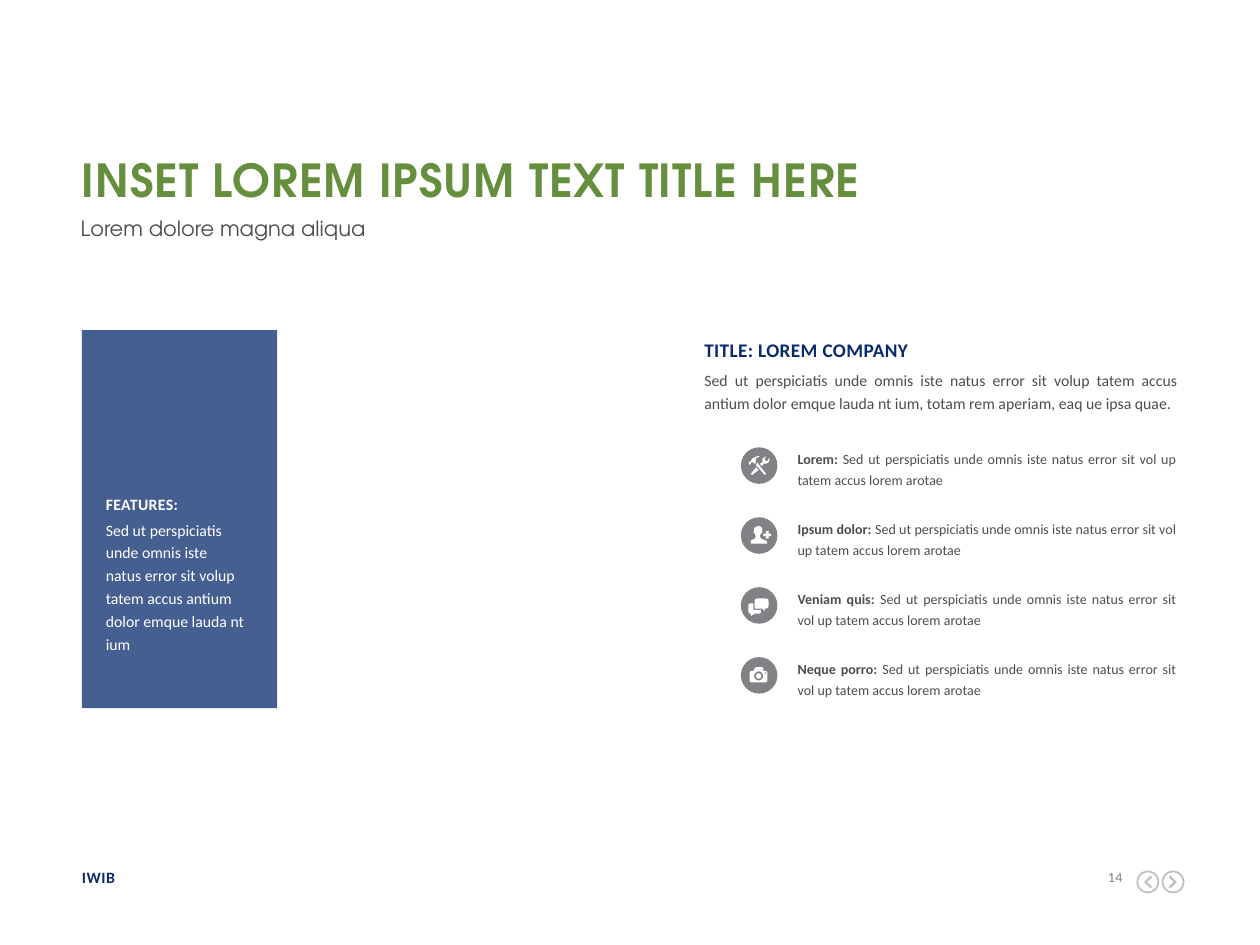
import math
from dataclasses import dataclass

import pptx
import pptx.dml.color
import pptx.enum.shapes
import pptx.enum.text
import pptx.oxml.ns
import pptx.util
from lxml import etree

Inches = pptx.util.Inches
Align = pptx.enum.text.PP_ALIGN
Shape = pptx.enum.shapes.MSO_SHAPE

COLORS = {
    "navy": "092A6D", "green": "658E3D", "text": "4D4D4D", "white": "FFFFFF",
    "icon": "808285", "number": "808080", "arrow": "BFBFBF",
}
BODY, DISPLAY = "Calibri", "TeX Gyre Adventor"
SED = "Sed ut perspiciatis unde omnis iste natus error sit vol"

Contour = list[tuple[float, float]]


@dataclass
class Span:
    text: str
    size: float
    color: str
    bold: bool = False
    tracking: int = 0  # hundredths of a point
    font: str = BODY


@dataclass
class TextBlock:
    left: float
    top: float
    width: float
    height: float
    spans: list[Span]
    align: Align = Align.LEFT
    leading: float | None = None
    after: float = 0


@dataclass
class Feature:
    label: str
    text: str
    contours: list[Contour]


def circle(x: float, y: float, radius: float, steps: int = 40) -> Contour:
    angles = [2 * math.pi * step / steps for step in range(steps)]
    return [(x + radius * math.cos(a), y + radius * math.sin(a)) for a in angles]


def write_text(box, block: TextBlock, grow: bool = True) -> None:
    box.left, box.top = Inches(block.left), Inches(block.top)
    box.width, box.height = Inches(block.width), Inches(block.height)
    frame = box.text_frame
    frame.word_wrap = True
    sizing = pptx.enum.text.MSO_AUTO_SIZE
    frame.auto_size = sizing.SHAPE_TO_FIT_TEXT if grow else sizing.NONE
    frame.vertical_anchor = pptx.enum.text.MSO_ANCHOR.TOP
    frame.margin_left = frame.margin_right = frame.margin_top = frame.margin_bottom = 0
    para = frame.paragraphs[0]
    para.alignment = block.align
    para.space_before = pptx.util.Pt(0)
    para.space_after = pptx.util.Pt(block.after)
    if block.leading:
        para.line_spacing = pptx.util.Pt(block.leading)
    for part in block.spans:
        span = para.add_run()
        span.text = part.text
        span.font.name = part.font
        span.font.size = pptx.util.Pt(part.size)
        span.font.bold = part.bold
        span.font.color.rgb = pptx.dml.color.RGBColor.from_string(COLORS[part.color])
        if part.tracking:
            span._r.get_or_add_rPr().set("spc", str(part.tracking))


def add_text(shapes, block: TextBlock) -> None:
    write_text(shapes.add_textbox(0, 0, 0, 0), block)


def paint(shape, color: str) -> None:
    shape.shadow.inherit = False
    shape.fill.solid()
    shape.fill.fore_color.rgb = pptx.dml.color.RGBColor.from_string(COLORS[color])
    shape.line.fill.background()


def add_preset(shapes, kind: Shape, left: float, top: float,
               width: float, height: float, color: str):
    shape = shapes.add_shape(kind, Inches(left), Inches(top), Inches(width), Inches(height))
    paint(shape, color)
    return shape


def add_glyph(shapes, left: float, top: float, contours: list[Contour], color: str) -> None:
    """Draw contours given in hundredths of an inch from left, top."""
    placed = [[(left * 1000 + x * 10, top * 1000 + y * 10) for x, y in contour]
              for contour in contours]
    builder = shapes.build_freeform(*placed[0][0], scale=Inches(1) / 1000)
    for index, contour in enumerate(placed):
        if index:
            builder.move_to(*contour[0])
        builder.add_line_segments(contour[1:], close=True)
    paint(builder.convert_to_shape(), color)


TOOLS = [
    [(6, 12), (7, 14), (8, 13), (8, 12), (9, 11.5), (11, 13), (12, 12), (12, 11),
     (11.5, 10), (12.5, 8.5), (15, 7), (13, 7), (9, 9), (8, 11)],
    [(13, 12), (12, 14), (19, 22), (20, 21)],
    [(23, 9), (22, 9), (21, 11), (20, 11), (19, 9), (20, 7), (17, 9), (17, 12),
     (15, 13), (17, 15), (18, 13), (20, 13), (22, 12)],
    [(8, 21), (9, 22), (14, 18), (12, 16)],
]
PERSON = [
    [(21, 20), (21, 21), (8, 21), (8, 18.5), (11, 17), (12, 15), (11, 13), (10, 12),
     (10.5, 11), (10.5, 9), (12, 7.5), (14, 7), (16, 7.5), (17, 9), (17, 12),
     (16, 13), (15, 15), (16, 17), (20, 18.5)],
    [(24, 13), (24, 15), (22, 15), (22, 17), (20, 17), (20, 15),
     (18, 15), (18, 13), (20, 13), (20, 11), (22, 11), (22, 13)],
]
CHAT = [
    [(16, 18), (16, 20), (15, 21), (11, 21), (8, 23), (8, 21), (7, 21), (6, 20),
     (6, 14), (7, 13), (10, 13), (10, 18)],
    [(22, 11), (22, 15), (21.5, 16.5), (20, 17), (19, 17), (19, 19), (17, 17),
     (11, 17), (11, 11), (11.5, 9.5), (13, 9), (20, 9), (21.5, 9.5)],
]
CAMERA = [
    [(21, 12), (21, 19), (20, 20), (8, 20), (7, 19), (7, 12), (8, 11), (10, 11),
     (11, 9), (12, 8), (17, 8), (18, 9), (18, 11), (20, 11)],
    circle(14.2, 15, 3.6), circle(14.2, 15, 2.1), circle(19.5, 12.7, 0.6),
]
FEATURES = [
    Feature("Lorem:", f" {SED} up tatem accus lorem arotae", TOOLS),
    Feature("Ipsum dolor: ", f"{SED} up tatem accus lorem arotae", PERSON),
    Feature("Veniam quis: ", f"{SED} up tatem accus lorem arotae", CHAT),
    Feature("Neque porro: ", f"{SED} up tatem accus lorem arotae", CAMERA),
]
CHEVRON = [(5.5, 5), (9.5, 9), (5.5, 13), (7, 14), (12, 9), (7, 4)]


def add_feature(shapes, feature: Feature, top: float) -> None:
    left = 5.88
    icon = shapes.add_group_shape()
    add_preset(icon.shapes, Shape.OVAL, left, top + 0.01, 0.29, 0.29, "icon")
    add_glyph(icon.shapes, left, top + 0.01, feature.contours, "white")
    add_text(shapes, TextBlock(6.33, top, 3.01, 0.32, [
        Span(feature.label, 8, "text", bold=True), Span(feature.text, 8, "text"),
    ], Align.JUSTIFY, 12, 6))


def main() -> None:
    deck = pptx.Presentation()
    deck.slide_width, deck.slide_height = Inches(10), Inches(7.5)
    page = deck.slides.add_slide(deck.slide_layouts[5])
    shapes = page.shapes

    # Title and subtitle
    write_text(shapes.title, TextBlock(0.65, 1.21, 8.7, 0.34, [
        Span("INSET LOREM IPSUM TEXT TITLE HERE", 26, "green", True, 50, DISPLAY)]), grow=False)
    write_text(shapes.add_textbox(0, 0, 0, 0), TextBlock(0.64, 1.74, 8.7, 0.42, [
        Span("Lorem dolore magna aliqua", 12, "text", font=DISPLAY)], leading=12), grow=False)

    # Translucent features panel
    panel = add_preset(shapes, Shape.RECTANGLE, 0.65, 2.62, 1.55, 3, "navy")
    fill_color = panel._element.spPr.find(".//" + pptx.oxml.ns.qn("a:srgbClr"))
    etree.SubElement(fill_color, pptx.oxml.ns.qn("a:alpha"), val="75000")
    add_text(shapes, TextBlock(0.84, 3.9, 1.1, 0.17, [
        Span("FEATURES:", 9, "white", True, 20)], leading=13, after=6))
    add_text(shapes, TextBlock(0.84, 4.1, 1.1, 1.08, [
        Span(f"{SED}up tatem accus antium dolor emque lauda nt ium", 9, "white"),
    ], leading=13, after=6))

    # Company introduction
    add_text(shapes, TextBlock(5.59, 2.63, 3.76, 0.22, [
        Span("TITLE: LOREM COMPANY", 11, "navy", True, 20)], leading=17, after=6))
    add_text(shapes, TextBlock(5.59, 2.91, 3.75, 0.35, [
        Span(f"{SED}up tatem accus antium dolor emque lauda nt ium, "
             "totam rem aperiam, eaq ue ipsa quae.", 9, "text"),
    ], Align.JUSTIFY, 13, 6))

    # Feature rows
    for index, feature in enumerate(FEATURES):
        add_feature(shapes, feature, 3.54 + 0.555 * index)

    # Footer with page arrows
    add_text(shapes, TextBlock(0.65, 6.89, 1.95, 0.15, [Span("IWIB", 9, "navy", True, 30)]))
    add_text(shapes, TextBlock(8.68, 6.89, 0.23, 0.13, [
        Span("14", 8, "number", tracking=30)], Align.RIGHT))
    ring = [circle(9, 9, 9), circle(9, 9, 7.6)]
    add_glyph(shapes, 9.02, 6.91, ring + [[(18 - x, y) for x, y in CHEVRON]], "arrow")
    add_glyph(shapes, 9.22, 6.91, ring + [CHEVRON], "arrow")

    deck.save("out.pptx")


if __name__ == "__main__":
    main()
